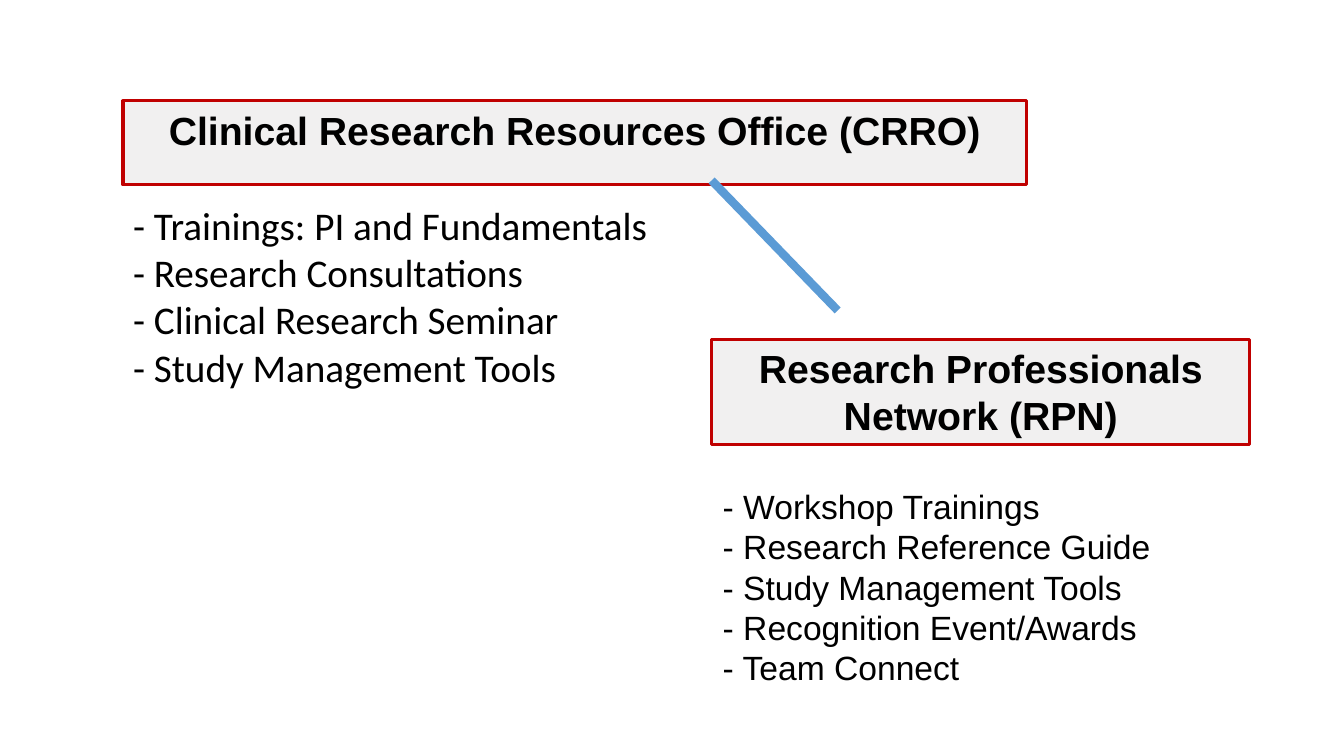
"""Build a slide on the clinical research office and its professionals network."""
from dataclasses import dataclass

from lxml import etree
from pptx import Presentation
from pptx import util as u
from pptx.dml.color import RGBColor
from pptx.enum import shapes, text
from pptx.oxml import ns

BLACK = RGBColor(0x00, 0x00, 0x00)
RED = RGBColor(0xC0, 0x00, 0x00)
GREY = RGBColor(0xF1, 0xF0, 0xF0)
BLUE = RGBColor(0x5B, 0x9B, 0xD5)


@dataclass
class Block:
    left: float
    top: float
    width: float
    height: float
    lines: list[str]
    font: str = "Arial"
    size: float = 28
    heading: bool = False


OFFICE = Block(87.84, 72, 645.12, 41.2,
               ["Clinical Research Resources Office (CRRO)"], heading=True)
NETWORK = Block(508.32, 242.64, 384.48, 75.12,
                ["Research Professionals Network (RPN)"], heading=True)
OFFICE_LIST = Block(87.84, 140.4, 491.04, 143.28, [
    "- Trainings: PI and Fundamentals",
    "- Research Consultations",
    "- Clinical Research Seminar",
    "- Study Management Tools",
], font="Calibri")
NETWORK_LIST = Block(509.04, 343.44, 383.76, 152.64, [
    "- Workshop Trainings",
    "- Research Reference Guide",
    "- Study Management Tools",
    "- Recognition Event/Awards",
    "- Team Connect",
], size=24)


def fill_block(box, block: Block) -> None:
    """Place a box and give it the text and look of its block."""
    box.left, box.top = u.Pt(block.left), u.Pt(block.top)
    box.width, box.height = u.Pt(block.width), u.Pt(block.height)
    frame = box.text_frame
    frame.text = "\n".join(block.lines)
    frame.word_wrap = True
    frame.auto_size = text.MSO_AUTO_SIZE.SHAPE_TO_FIT_TEXT
    frame.vertical_anchor = text.MSO_ANCHOR.TOP
    for para in frame.paragraphs:
        para.alignment = text.PP_ALIGN.CENTER if block.heading else text.PP_ALIGN.LEFT
        para.space_before = u.Pt(0)
        para.font.name = block.font
        para.font.size = u.Pt(block.size)
        para.font.bold = block.heading
        para.font.color.rgb = BLACK
        if not block.heading:
            properties = para._p.get_or_add_pPr()
            properties.set("marL", "0")
            properties.set("indent", "0")
            bullet = etree.Element(ns.qn("a:buNone"))
            properties.find(ns.qn("a:defRPr")).addprevious(bullet)
    if block.heading:
        box.fill.solid()
        box.fill.fore_color.rgb = GREY
        box.line.color.rgb = RED
        box.line.width = u.Pt(2.25)


def add_link(page) -> None:
    """Draw the line from the office down to the network."""
    link = page.shapes.add_connector(
        shapes.MSO_CONNECTOR.STRAIGHT,
        u.Pt(508.32), u.Pt(128.88), u.Pt(598.32), u.Pt(221.76))
    link.line.color.rgb = BLUE
    link.line.width = u.Pt(6)
    etree.SubElement(link._element.spPr, ns.qn("a:effectLst"))


def main() -> None:
    """Create the deck and save it."""
    deck = Presentation()
    deck.slide_width, deck.slide_height = u.Pt(960), u.Pt(540)
    page = deck.slides.add_slide(deck.slide_layouts.get_by_name("Two Content"))
    fill_block(page.shapes.title, OFFICE)
    network = page.shapes.add_shape(shapes.MSO_SHAPE.RECTANGLE, 0, 0, 0, 0)
    network.shadow.inherit = False
    fill_block(network, NETWORK)
    add_link(page)
    fill_block(page.placeholders[1], OFFICE_LIST)
    fill_block(page.placeholders[2], NETWORK_LIST)
    deck.save("out.pptx")


if __name__ == "__main__":
    main()
